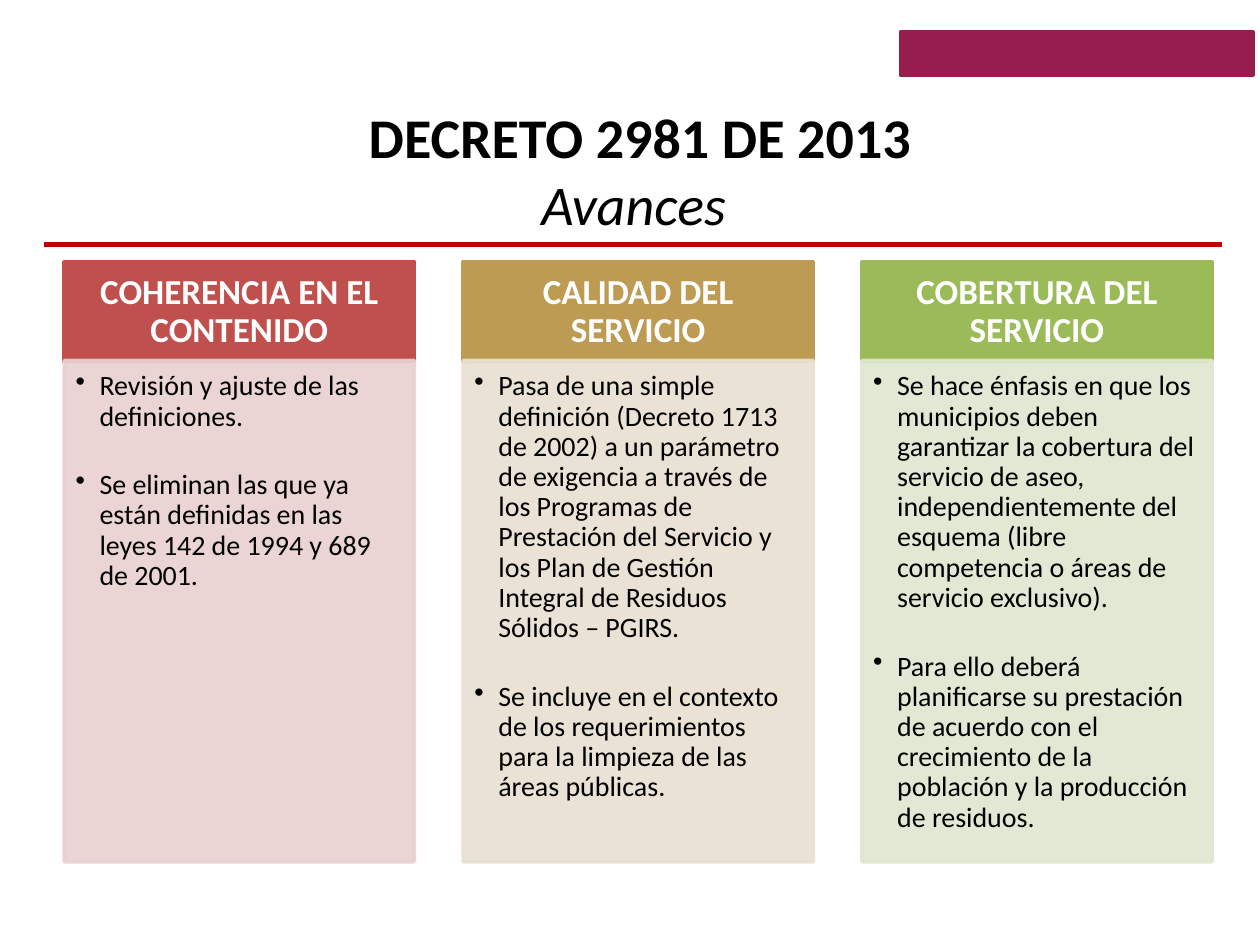
from lxml import etree
from pptx import Presentation
from pptx import util as u
from pptx.dml.color import RGBColor
from pptx.enum import shapes, text
from pptx.oxml import ns

BLACK = RGBColor(0x00, 0x00, 0x00)
WHITE = RGBColor(0xFF, 0xFF, 0xFF)
RULE_RED = RGBColor(0xC0, 0x00, 0x00)
PLUM = RGBColor(0x96, 0x1D, 0x4E)
RED, PALE_RED = RGBColor(0xC0, 0x50, 0x4D), RGBColor(0xE8, 0xD0, 0xD0)
GOLD, PALE_GOLD = RGBColor(0xBD, 0x9B, 0x53), RGBColor(0xE8, 0xE1, 0xD1)
GREEN, PALE_GREEN = RGBColor(0x9B, 0xBB, 0x59), RGBColor(0xDE, 0xE7, 0xD1)

COLUMNS = [
    ("COHERENCIA EN EL CONTENIDO", RED, PALE_RED, [
        "Revisión y ajuste de las definiciones.",
        "Se eliminan las que ya están definidas en las leyes 142 de 1994 y 689 "
        "de 2001."]),
    ("CALIDAD DEL SERVICIO", GOLD, PALE_GOLD, [
        "Pasa de una simple definición (Decreto 1713 de 2002) a un parámetro de "
        "exigencia a través de los Programas de Prestación del Servicio y los "
        "Plan de Gestión Integral de Residuos Sólidos – PGIRS.",
        "Se incluye en el contexto de los requerimientos para la limpieza de "
        "las áreas públicas."]),
    ("COBERTURA DEL SERVICIO", GREEN, PALE_GREEN, [
        "Se hace énfasis en que los municipios deben garantizar la cobertura "
        "del servicio de aseo, independientemente del esquema (libre "
        "competencia o áreas de servicio exclusivo).",
        "Para ello deberá planificarse su prestación de acuerdo con el "
        "crecimiento de la población y la producción de residuos."]),
]
COLUMN_LEFT, COLUMN_GAP, COLUMN_WIDTH = 0.51, 0.385, 2.78
HEADER_TOP, HEADER_HEIGHT = 2.08, 0.79
BODY_TOP, BODY_HEIGHT = 2.86, 3.98


def add_xml(parent, tag, **attributes):
    return etree.SubElement(parent, ns.qn(tag), attributes)


class SlideBuilder:
    body_font = "Calibri"

    def __init__(self, deck):
        self.slide = deck.slides.add_slide(deck.slide_layouts[5])

    def span(self, para, words, size, color, bold=False, italic=False):
        span = para.add_run()
        span.text = words
        span.font.name, span.font.size = self.body_font, u.Pt(size)
        span.font.color.rgb = color
        span.font.bold, span.font.italic = bold, italic

    def title(self, heading, subtitle):
        box = self.slide.shapes.title
        box.left, box.top = u.Inches(0.83), u.Inches(0.76)
        box.width, box.height = u.Inches(8.5), u.Inches(0.55)
        frame = box.text_frame
        frame.auto_size = text.MSO_AUTO_SIZE.NONE
        frame.vertical_anchor = text.MSO_ANCHOR.TOP
        para = frame.paragraphs[0]
        para.alignment = text.PP_ALIGN.CENTER
        self.span(para, heading, 32, BLACK, bold=True)
        para.add_line_break()
        self.span(para, subtitle, 32, BLACK, italic=True)

    def rule(self, left, right, y):
        line = self.slide.shapes.add_connector(
            shapes.MSO_CONNECTOR.STRAIGHT,
            u.Inches(left), u.Inches(y), u.Inches(right), u.Inches(y))
        line.line.color.rgb, line.line.width = RULE_RED, u.Pt(3)
        add_xml(line._element.spPr, "a:effectLst")

    def block(self, left, top, width, height, color):
        """Add a plain rectangle filled and outlined in one colour."""
        box = self.slide.shapes.add_shape(
            shapes.MSO_SHAPE.RECTANGLE, u.Inches(left), u.Inches(top),
            u.Inches(width), u.Inches(height))
        box.shadow.inherit = False
        box.fill.solid()
        box.fill.fore_color.rgb = color
        box.line.color.rgb, box.line.width = color, u.Pt(2)
        return box

    def panel(self, left, top, height, color, margins):
        """Add a column block that is ready for wrapped text."""
        box = self.block(left, top, COLUMN_WIDTH, height, color)
        frame = box.text_frame
        frame.word_wrap = True
        (frame.margin_left, frame.margin_top, frame.margin_right,
         frame.margin_bottom) = map(u.Inches, margins)
        return box

    def header(self, left, words, color):
        box = self.panel(left, HEADER_TOP, HEADER_HEIGHT, color,
                         (0.16, 0.09, 0.16, 0.09))
        box.text_frame.vertical_anchor = text.MSO_ANCHOR.MIDDLE
        para = box.text_frame.paragraphs[0]
        para.alignment, para.line_spacing = text.PP_ALIGN.CENTER, 0.9
        self.span(para, words, 20, WHITE, bold=True)

    def bullets(self, left, items, color):
        box = self.panel(left, BODY_TOP, BODY_HEIGHT, color,
                         (0.09, 0.09, 0.12, 0.14))
        for fill in box._element.spPr.findall(".//" + ns.qn("a:srgbClr")):
            add_xml(fill, "a:alpha", val="90000")
        frame = box.text_frame
        frame.vertical_anchor = text.MSO_ANCHOR.TOP
        for index, words in enumerate(items):
            para = frame.add_paragraph() if index else frame.paragraphs[0]
            para.alignment, para.line_spacing = text.PP_ALIGN.LEFT, 0.9
            if index:
                para.space_before = u.Pt(22)
            properties = para._p.get_or_add_pPr()
            properties.set("marL", str(u.Inches(0.19)))
            properties.set("indent", str(u.Inches(-0.19)))
            add_xml(properties, "a:buChar", char="•")
            self.span(para, words, 16, BLACK)


def main():
    deck = Presentation()
    deck.slide_width, deck.slide_height = u.Inches(10), u.Inches(7.5)
    page = SlideBuilder(deck)
    page.block(7.15, 0.25, 2.8, 0.35, PLUM)
    page.rule(0.35, 9.7, 1.94)
    page.title("DECRETO 2981 DE 2013", "Avances ")
    for index, (heading, color, pale, items) in enumerate(COLUMNS):
        left = COLUMN_LEFT + index * (COLUMN_WIDTH + COLUMN_GAP)
        page.header(left, heading, color)
        page.bullets(left, items, pale)
    deck.save("out.pptx")


if __name__ == "__main__":
    main()
